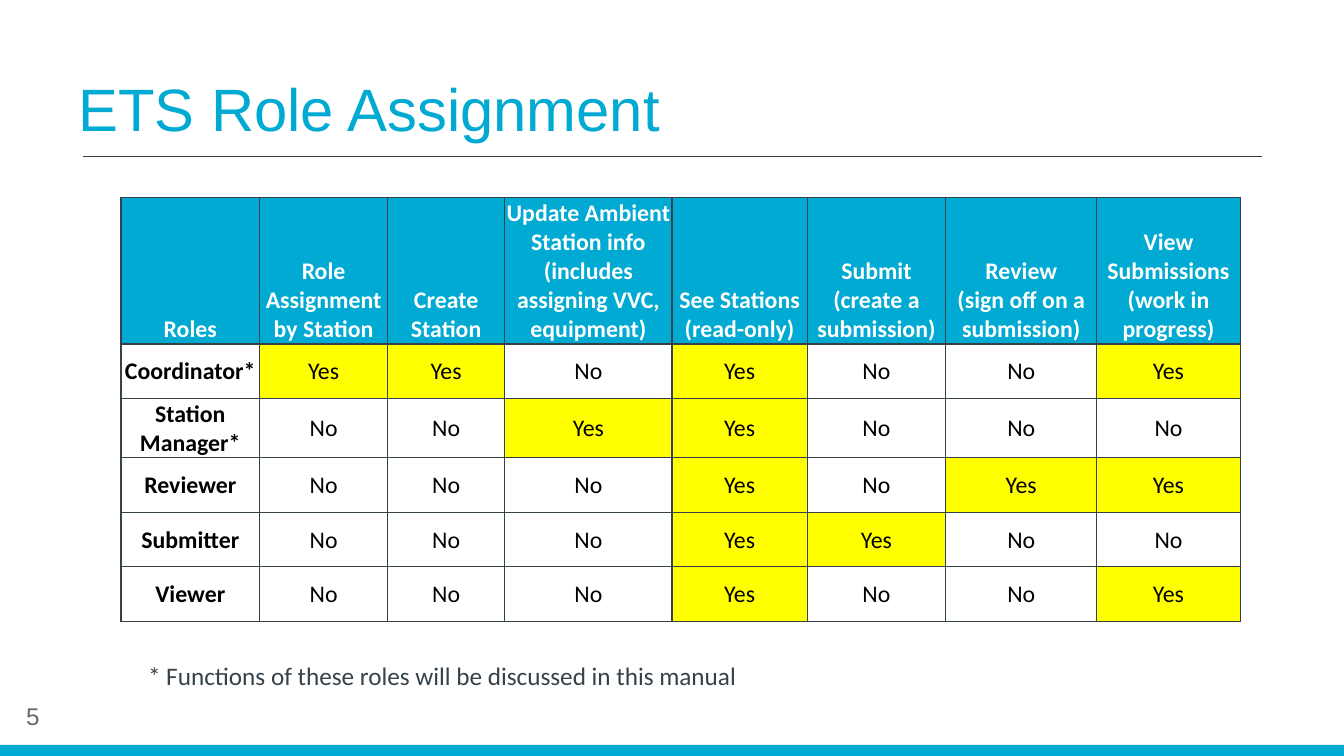
from dataclasses import dataclass

from lxml.etree import SubElement
from pptx import Presentation
from pptx.dml.color import RGBColor
from pptx.enum.shapes import MSO_CONNECTOR as Connector, MSO_SHAPE as Shape
from pptx.enum.text import MSO_ANCHOR as Anchor, MSO_AUTO_SIZE as AutoSize, PP_ALIGN as Align
from pptx.oxml.ns import qn
from pptx.util import Inches, Pt

COLORS = {
    "accent": "00AAD2", "slate": "36424A", "gray": "5F6A72",
    "white": "FFFFFF", "black": "000000", "highlight": "FFFF00",
}
WIDTH, HEIGHT = Inches(13.33), Inches(7.5)


@dataclass(frozen=True)
class Box:
    """A rectangle in percent of the slide's width and height."""
    left: float
    top: float
    width: float
    height: float

    def emu(self) -> tuple[int, int, int, int]:
        return across(self.left), down(self.top), across(self.width), down(self.height)


@dataclass(frozen=True)
class Style:
    size: float
    color: str
    font: str = "Calibri"
    bold: bool = False


@dataclass(frozen=True)
class Role:
    name: str
    rights: str  # one letter per task: Y or N


@dataclass(frozen=True)
class Label:
    text: str
    box: Box
    style: Style
    anchor: Anchor = Anchor.TOP
    indent: float = 0
    wrap: bool = True


TASKS = [
    "Roles", "Role Assignment by Station", "Create Station",
    "Update Ambient Station info\n(includes assigning VVC, equipment)",
    "See Stations\n(read-only)", "Submit\n(create a submission)",
    "Review\n(sign off on a submission)", "View Submissions (work in progress)",
]
ROLES = [
    Role("Coordinator*", "YYNYNNY"),
    Role("Station Manager*", "NNYYNNN"),
    Role("Reviewer", "NNNYNYY"),
    Role("Submitter", "NNNYYNN"),
    Role("Viewer", "NNNYNNY"),
]
COLUMN_SHARES = [10.32, 9.52, 8.72, 12.45, 10.05, 10.32, 11.23, 10.68]
HEADER_SHARE, ROLE_SHARE = 17.5, 7.21
TABLE_BOX = Box(9, 26.13, sum(COLUMN_SHARES), HEADER_SHARE + ROLE_SHARE * len(ROLES))

HEADER_STYLE = Style(17, "white", bold=True)
ROLE_STYLE = Style(17, "black", bold=True)
ANSWER_STYLE = Style(17, "black")
LABELS = [
    Label("5", Box(1.2, 92, 22.5, 5.33), Style(17.3, "gray", "Arial"), Anchor.MIDDLE),
    Label("* Functions of these roles will be discussed in this manual",
          Box(9, 86.67, 47.11, 5.33), Style(18, "slate"), indent=0.17, wrap=False),
]


def across(share: float) -> int:
    return round(WIDTH * share / 100)


def down(share: float) -> int:
    return round(HEIGHT * share / 100)


def rgb(name: str) -> RGBColor:
    return RGBColor.from_string(COLORS[name])


def format_text(tf, style: Style, align: Align) -> None:
    for p in tf.paragraphs:
        p.alignment = align
        for r in p.runs:
            r.font.name, r.font.size, r.font.bold = style.font, Pt(style.size), style.bold
            r.font.color.rgb = rgb(style.color)


def add_borders(cell) -> None:
    props = cell._tc.get_or_add_tcPr()
    for position, side in enumerate(("lnL", "lnR", "lnT", "lnB")):
        line = props.makeelement(qn(f"a:{side}"), {"w": str(Pt(1))})
        fill = SubElement(line, qn("a:solidFill"))
        SubElement(fill, qn("a:srgbClr"), val=COLORS["slate"])
        props.insert(position, line)


def fill_cell(cell, text: str, style: Style, fill: str | None, anchor: Anchor) -> None:
    cell.text_frame.text = text
    format_text(cell.text_frame, style, Align.CENTER)
    cell.vertical_anchor = anchor
    cell.margin_left = cell.margin_right = cell.margin_top = Inches(0.01)
    cell.margin_bottom = 0
    if fill:
        cell.fill.solid()
        cell.fill.fore_color.rgb = rgb(fill)
    else:
        cell.fill.background()
    add_borders(cell)


def add_role_table(slide) -> None:
    frame = slide.shapes.add_table(len(ROLES) + 1, len(TASKS), *TABLE_BOX.emu())
    table = frame.table
    table.first_row = table.horz_banding = False
    for column, share in zip(table.columns, COLUMN_SHARES):
        column.width = across(share)
    for i, row in enumerate(table.rows):
        row.height = down(ROLE_SHARE if i else HEADER_SHARE)

    for col, task in enumerate(TASKS):
        fill_cell(table.cell(0, col), task, HEADER_STYLE, "accent", Anchor.BOTTOM)
    for row, role in enumerate(ROLES, 1):
        fill_cell(table.cell(row, 0), role.name, ROLE_STYLE, None, Anchor.MIDDLE)
        for col, right in enumerate(role.rights, 1):
            text, fill = ("Yes", "highlight") if right == "Y" else ("No", None)
            fill_cell(table.cell(row, col), text, ANSWER_STYLE, fill, Anchor.MIDDLE)


def add_label(slide, label: Label) -> None:
    tf = slide.shapes.add_textbox(*label.box.emu()).text_frame
    tf.word_wrap = label.wrap
    tf.vertical_anchor = label.anchor
    tf.text = label.text
    if label.indent:
        props = tf.paragraphs[0]._p.get_or_add_pPr()
        props.set("marL", str(Inches(label.indent)))
        props.set("indent", "0")
    format_text(tf, label.style, Align.LEFT)


def add_title(slide, text: str) -> None:
    sp = slide.shapes.title
    sp.left, sp.top, sp.width, sp.height = Box(5.1, 8.53, 89.87, 11.07).emu()
    tf = sp.text_frame
    tf.text = text
    tf.auto_size = AutoSize.NONE
    tf.vertical_anchor = Anchor.BOTTOM
    format_text(tf, Style(42.7, "accent", "Arial"), Align.LEFT)


def add_frame(slide) -> None:
    bar = slide.shapes.add_shape(Shape.RECTANGLE, *Box(0, 98.53, 100, 1.47).emu())
    bar.shadow.inherit = False
    bar.fill.solid()
    bar.fill.fore_color.rgb = rgb("accent")
    bar.line.fill.background()

    y = down(20.67)
    rule = slide.shapes.add_connector(Connector.STRAIGHT, across(6.15), y, across(93.92), y)
    rule.line.color.rgb = rgb("slate")
    rule.line.width = Pt(0.75)
    SubElement(rule._element.spPr, qn("a:effectLst"))


def main() -> None:
    prs = Presentation()
    prs.slide_width, prs.slide_height = WIDTH, HEIGHT
    slide = prs.slides.add_slide(prs.slide_layouts[5])

    # Bottom bar and rule under the title
    add_frame(slide)
    # Title and table of rights
    add_title(slide, "ETS Role Assignment")
    add_role_table(slide)
    # Page number and footnote
    for label in LABELS:
        add_label(slide, label)

    prs.save("out.pptx")


if __name__ == "__main__":
    main()
